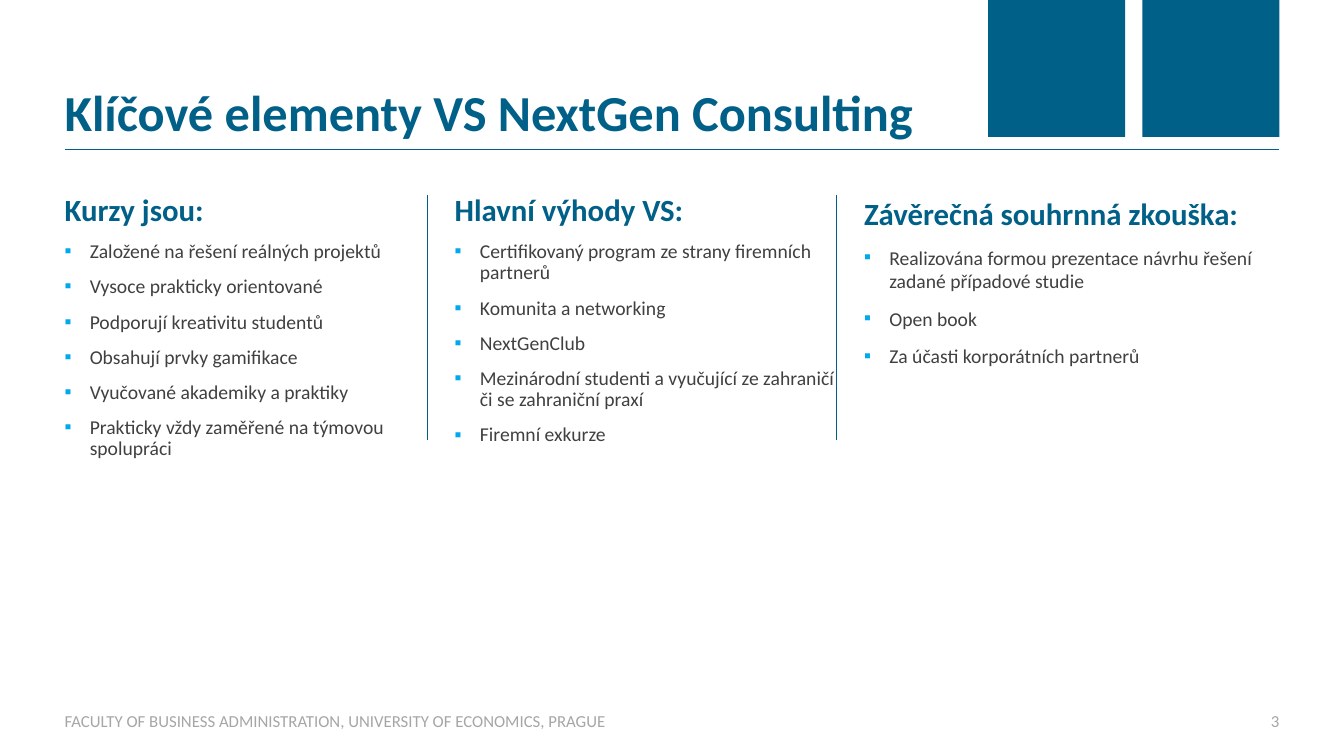
from pptx import Presentation
from pptx.dml.color import RGBColor
from pptx.enum.shapes import MSO_CONNECTOR, MSO_SHAPE
from pptx.enum.text import MSO_ANCHOR, PP_ALIGN
from pptx.oxml.ns import qn
from pptx.util import Inches, Pt
from lxml.etree import SubElement

TITLE = "Klíčové elementy VS NextGen Consulting"
FOOTER = "FACULTY OF BUSINESS ADMINISTRATION, UNIVERSITY OF ECONOMICS, PRAGUE"
NUMBER = "3"
COLUMNS = [
    {"left": 0.64, "width": 3.38, "height": 2.8, "spacing": 0.9,
     "head": "Kurzy jsou:",
     "items": ["Založené na řešení reálných projektů",
               "Vysoce prakticky orientované",
               "Podporují kreativitu studentů",
               "Obsahují prvky gamifikace",
               "Vyučované akademiky a praktiky",
               "Prakticky vždy zaměřené na týmovou spolupráci"]},
    {"left": 4.51, "width": 3.79, "height": 2.61, "spacing": 0.9,
     "head": "Hlavní výhody VS:",
     "items": ["Certifikovaný program ze strany firemních partnerů",
               "Komunita a networking",
               "NextGenClub",
               "Mezinárodní studenti a vyučující ze zahraničí či se zahraniční praxí",
               "Firemní exkurze"]},
    {"left": 8.57, "width": 4.12, "height": 2.61, "spacing": 1.0,
     "head": "Závěrečná souhrnná zkouška:",
     "items": ["Realizována formou prezentace návrhu řešení zadané případové studie",
               "Open book",
               "Za účasti korporátních partnerů"]},
]
BLUE, SKY, DARK, GRAY = "006088", "00A8EC", "404040", "A6A6A6"
LEFT, RIGHT, TOP = 0.64, 12.69, 1.93
SQUARE, STEP, GAP = 1.36, 1.53, 0.27


def color(code):
    """Turn a hex string into a colour."""
    return RGBColor.from_string(code)


def add_box(slide, left, top, width, height, anchor=MSO_ANCHOR.TOP):
    """Add a wrapping text box without margins and return its frame."""
    frame = slide.shapes.add_textbox(
        Inches(left), Inches(top), Inches(width), Inches(height)).text_frame
    frame.word_wrap = True
    frame.vertical_anchor = anchor
    frame.margin_left = frame.margin_right = 0
    frame.margin_top = frame.margin_bottom = 0
    return frame


def add_text(frame, text, size=14, fill=DARK, bold=False, align=PP_ALIGN.LEFT,
             spacing=1.0, bullet=False):
    """Write one paragraph, using the empty first one when it is free."""
    first = not frame.text
    para = frame.paragraphs[0] if first else frame.add_paragraph()
    para.alignment = align
    para.line_spacing = spacing
    para.space_before = Pt(0 if first else 10)
    if bullet:
        props = para._p.get_or_add_pPr()
        props.set("marL", str(Inches(0.25)))
        props.set("indent", str(-Inches(0.25)))
        tint = SubElement(props, qn("a:buClr"))
        SubElement(tint, qn("a:srgbClr"), val=SKY)
        SubElement(props, qn("a:buFont"), typeface="Calibri")
        SubElement(props, qn("a:buChar"), char="▪")
    run = para.add_run()
    run.text = text
    run.font.name = "Calibri"
    run.font.size = Pt(size)
    run.font.bold = bold
    run.font.color.rgb = color(fill)


def add_line(slide, start, end, weight):
    """Draw a plain blue line between two points."""
    line = slide.shapes.add_connector(
        MSO_CONNECTOR.STRAIGHT, *(Inches(n) for n in start + end))
    line.line.color.rgb = color(BLUE)
    line.line.width = Pt(weight)
    SubElement(line._element.spPr, qn("a:effectLst"))


def add_square(slide, left):
    """Add a blue square at the top edge."""
    shape = slide.shapes.add_shape(
        MSO_SHAPE.RECTANGLE, Inches(left), 0, Inches(SQUARE), Inches(SQUARE))
    shape.shadow.inherit = False
    shape.fill.solid()
    shape.fill.fore_color.rgb = color(BLUE)
    shape.line.fill.background()


def main():
    """Build the slide and save it."""
    deck = Presentation()
    deck.slide_width, deck.slide_height = Inches(13.33), Inches(7.5)
    slide = deck.slides.add_slide(deck.slide_layouts[6])

    add_line(slide, (LEFT, 1.48), (RIGHT, 1.48), 0.25)
    for place in range(2):
        add_square(slide, RIGHT - SQUARE - place * STEP)

    title = add_box(slide, LEFT, 0.86, RIGHT - LEFT, 0.55, MSO_ANCHOR.BOTTOM)
    add_text(title, TITLE, size=36, fill=BLUE, bold=True, spacing=0.9)
    footer = add_box(slide, LEFT, 7.05, 10.16, 0.2, MSO_ANCHOR.MIDDLE)
    add_text(footer, FOOTER, size=12, fill=GRAY)
    number = add_box(slide, RIGHT - 0.51, 7.05, 0.51, 0.2, MSO_ANCHOR.MIDDLE)
    add_text(number, NUMBER, size=12, fill=GRAY, align=PP_ALIGN.RIGHT)

    for col in COLUMNS:
        body = add_box(slide, col["left"], TOP, col["width"], col["height"])
        add_text(body, col["head"], size=22, fill=BLUE, bold=True,
                 spacing=col["spacing"])
        for item in col["items"]:
            add_text(body, item, spacing=col["spacing"], bullet=True)
    for col in COLUMNS[1:]:
        edge = col["left"] - GAP
        add_line(slide, (edge, TOP), (edge, 4.37), 0.5)

    deck.save("out.pptx")


if __name__ == "__main__":
    main()
